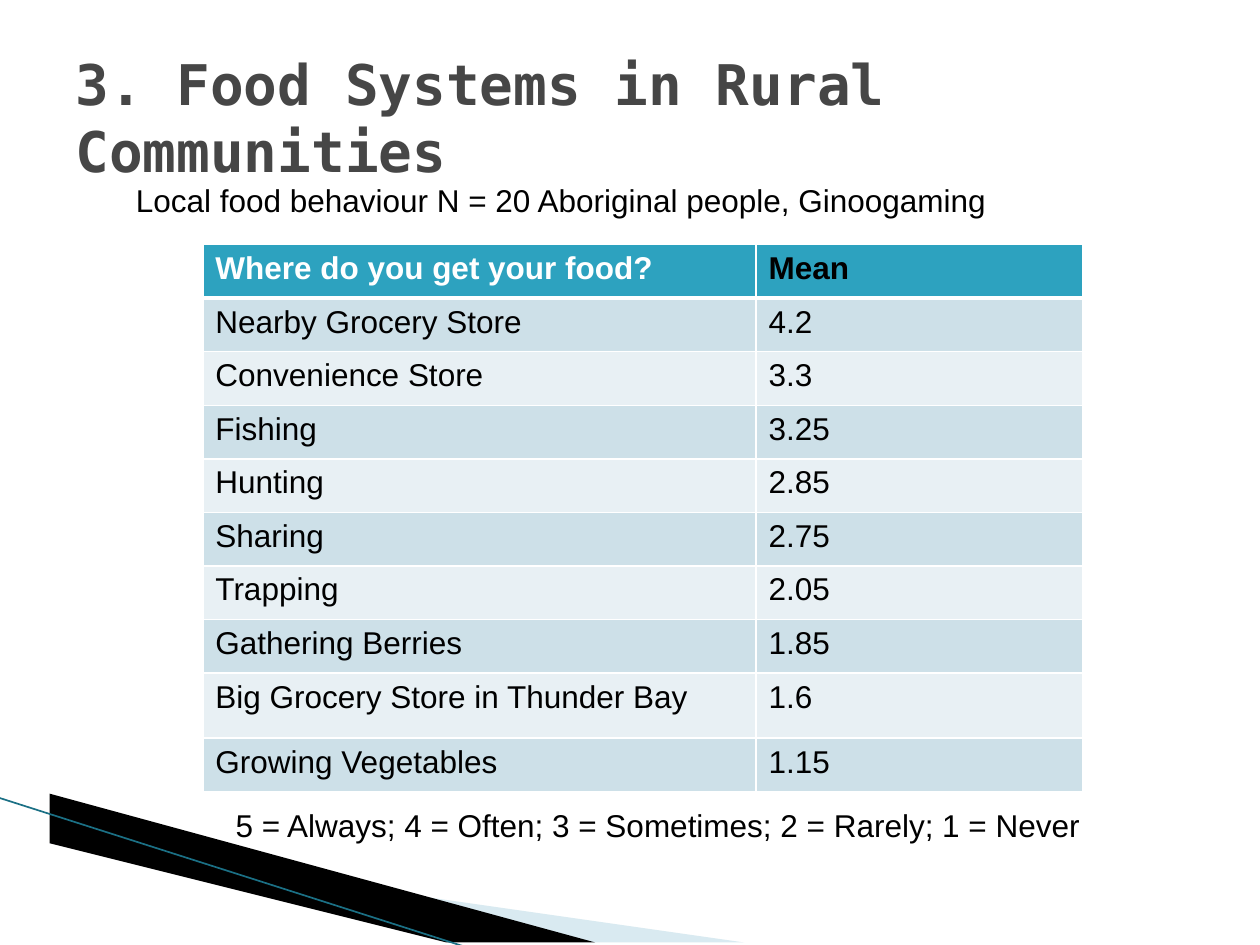
from lxml.etree import SubElement
from pptx import Presentation
from pptx.dml.color import RGBColor
from pptx.enum.shapes import MSO_CONNECTOR as Connector
from pptx.enum.text import MSO_ANCHOR as Anchor, MSO_AUTO_SIZE as AutoSize
from pptx.oxml.ns import qn
from pptx.util import Cm, Pt

BLACK, WHITE = "000000", "FFFFFF"
HEADER_FILL = "2DA2BF"
BAND_FILLS = ("E8F0F4", "CDE0E8")
BODY = {"name": "Arial", "size": Pt(18), "bold": False}
TITLE = {"name": "DejaVu Sans Mono", "size": Pt(32), "bold": True}

FOOD_SOURCES = [
    ("Where do you get your food?", "Mean"),
    ("Nearby Grocery Store", "4.2"),
    ("Convenience Store", "3.3"),
    ("Fishing", "3.25"),
    ("Hunting", "2.85"),
    ("Sharing", "2.75"),
    ("Trapping", "2.05"),
    ("Gathering Berries", "1.85"),
    ("Big Grocery Store in Thunder Bay", "1.6"),
    ("Growing Vegetables", "1.15"),
]
COLUMN_WIDTHS = (11.15, 6.58)
ROW_HEIGHT, TALL_ROW_HEIGHT, TALL_ROW = 1.08, 1.31, 8


def rgb(color):
    return RGBColor.from_string(color)


def write(text_frame, text, style, color):
    paragraph = text_frame.paragraphs[0]
    run = paragraph.add_run()
    run.text = text
    for name, value in style.items():
        setattr(run.font, name, value)
    run.font.color.rgb = rgb(color)


def add_text(slide, box, text, style, color, **frame_format):
    shape = slide.shapes.add_textbox(*map(Cm, box))
    for name, value in frame_format.items():
        setattr(shape.text_frame, name, value)
    write(shape.text_frame, text, style, color)


def add_wedge(slide, points, color, opacity=100):
    builder = slide.shapes.build_freeform(*points[0], scale=Cm(1))
    builder.add_line_segments(points[1:], close=True)
    shape = builder.convert_to_shape()
    shape.shadow.inherit = False
    shape.fill.solid()
    shape.fill.fore_color.rgb = rgb(color)
    shape.line.fill.background()
    if opacity < 100:
        fill_color = shape.fill._xPr.find(".//" + qn("a:srgbClr"))
        SubElement(fill_color, qn("a:alpha"), val=str(opacity * 1000))


def add_line(slide, ends, color, width):
    line = slide.shapes.add_connector(Connector.STRAIGHT, *map(Cm, ends))
    line.line.color.rgb = rgb(color)
    line.line.width = Pt(width)
    SubElement(line._element.spPr, qn("a:effectLst"))


def set_borders(cell, widths):
    properties = cell._tc.get_or_add_tcPr()
    for side, width in zip("LRTB", widths):
        border = SubElement(properties, qn(f"a:ln{side}"), w=str(Pt(width)))
        fill = SubElement(border, qn("a:solidFill"))
        SubElement(fill, qn("a:srgbClr"), val=WHITE)


def add_food_table(slide, left, top):
    heights = [ROW_HEIGHT] * len(FOOD_SOURCES)
    heights[TALL_ROW] = TALL_ROW_HEIGHT
    size = (len(FOOD_SOURCES), len(COLUMN_WIDTHS))
    box = (left, top, sum(COLUMN_WIDTHS), sum(heights))
    table = slide.shapes.add_table(*size, *map(Cm, box)).table
    for column, width in zip(table.columns, COLUMN_WIDTHS):
        column.width = Cm(width)
    for row, height in zip(table.rows, heights):
        row.height = Cm(height)

    for i, texts in enumerate(FOOD_SOURCES):
        header = i == 0
        for j, text in enumerate(texts):
            cell = table.cell(i, j)
            # The rule under the header is thicker than the others
            set_borders(cell, (1, 1, 3 if i == 1 else 1, 3 if header else 1))
            cell.fill.solid()
            cell.fill.fore_color.rgb = rgb(HEADER_FILL if header else BAND_FILLS[i % 2])
            color = WHITE if header and j == 0 else BLACK
            write(cell.text_frame, text, {**BODY, "bold": header}, color)


def main():
    presentation = Presentation()
    presentation.slide_width, presentation.slide_height = Cm(25.4), Cm(19.05)
    slide = presentation.slides.add_slide(presentation.slide_layouts[6])

    # Corner decoration
    add_wedge(slide, [(1.4, 16.54), (15.11, 19.08), (11.58, 19.08), (1.4, 16.51)],
              "A0CBDC", opacity=40)
    add_wedge(slide, [(1.35, 16.48), (11.61, 19.08), (9.45, 19.1), (1.37, 16.51)], BLACK)
    add_line(slide, (-0.03, 16.08, 9.42, 19.1), "1B7085", 0.95)

    # Title
    add_text(slide, (1.27, 0.76, 22.86, 3.18), "3. Food Systems in Rural Communities",
             TITLE, "464646", word_wrap=True, vertical_anchor=Anchor.MIDDLE)

    # Survey results with scale and caption
    add_food_table(slide, 4.09, 4.93)
    caption_format = {"word_wrap": False, "auto_size": AutoSize.SHAPE_TO_FIT_TEXT}
    add_text(slide, (4.5, 16.13, 17.7, 1.02),
             "5 = Always; 4 = Often; 3 = Sometimes; 2 = Rarely; 1 = Never",
             BODY, BLACK, **caption_format)
    add_text(slide, (2.49, 3.53, 17.81, 1.02),
             "Local food behaviour N = 20 Aboriginal people, Ginoogaming",
             BODY, BLACK, **caption_format)

    presentation.save("out.pptx")


if __name__ == "__main__":
    main()
